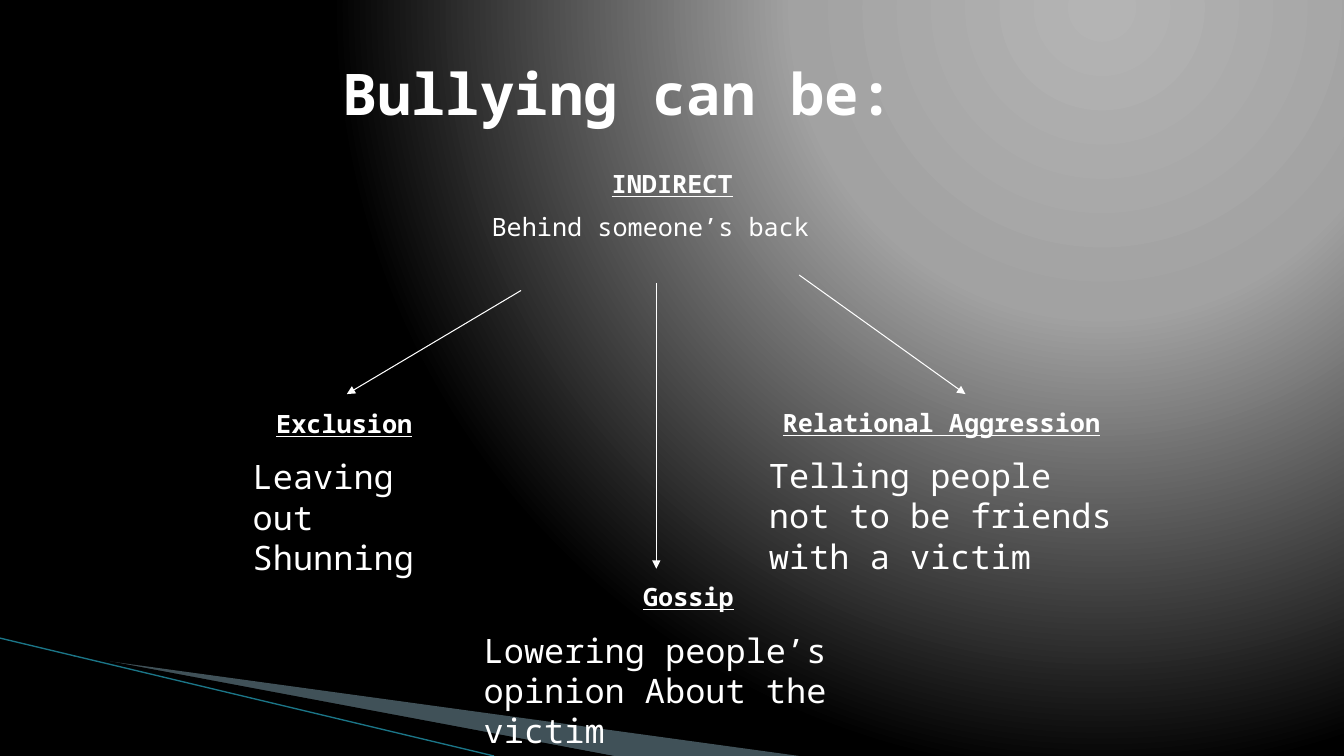
from lxml import etree
from pptx import Presentation
from pptx.dml.color import RGBColor
from pptx.enum.shapes import MSO_CONNECTOR
from pptx.enum.text import MSO_ANCHOR, MSO_AUTO_SIZE, PP_ALIGN
from pptx.oxml.ns import qn
from pptx.util import Cm, Pt

STRAIGHT = MSO_CONNECTOR.STRAIGHT
MIDDLE = MSO_ANCHOR.MIDDLE
NO_AUTOFIT = MSO_AUTO_SIZE.NONE
LEFT, CENTER = PP_ALIGN.LEFT, PP_ALIGN.CENTER

WHITE = RGBColor(0xFF, 0xFF, 0xFF)
BLACK = RGBColor(0x00, 0x00, 0x00)
PALE_BLUE = RGBColor(0xA0, 0xCB, 0xDC)
TEAL = RGBColor(0x1B, 0x75, 0x87)
LIGHT_GREY = RGBColor(0xB4, 0xB4, 0xB4)
MID_GREY = RGBColor(0xA2, 0xA2, 0xA2)
FONT = "Noto Sans Mono"


def add_text(paragraph, text, size, bold=False, underline=False):
    run = paragraph.add_run()
    run.text = text
    run.font.name = FONT
    run.font.size = Pt(size)
    run.font.bold = bold
    run.font.underline = underline
    run.font.color.rgb = WHITE


def add_line(start, end, color, width):
    line = slide.shapes.add_connector(
        STRAIGHT, *[Cm(value) for value in start + end])
    line.line.color.rgb = color
    line.line.width = Pt(width)
    etree.SubElement(line._element.spPr, qn("a:effectLst"))
    return line


prs = Presentation()
prs.slide_width, prs.slide_height = Cm(33.87), Cm(19.05)
slide = prs.slides.add_slide(prs.slide_layouts[5])

slide.background.fill.gradient()
glow = slide._element.find(".//" + qn("a:gradFill"))
for child in list(glow):
    glow.remove(child)
stops = etree.SubElement(glow, qn("a:gsLst"))
for position, color in [(0, LIGHT_GREY), (40, MID_GREY), (100, BLACK)]:
    stop = etree.SubElement(stops, qn("a:gs"), pos=str(position * 1000))
    etree.SubElement(stop, qn("a:srgbClr"), val=str(color))
circle = etree.SubElement(glow, qn("a:path"), path="circle")
etree.SubElement(circle, qn("a:fillToRect"), l="65000", t="0", r="0", b="98000")

title = slide.shapes.title
title.left, title.top, title.width, title.height = Cm(8.38), Cm(0.43), Cm(17.02), Cm(3.81)
title.text_frame.auto_size = NO_AUTOFIT
title.text_frame.vertical_anchor = MIDDLE
heading = title.text_frame.paragraphs[0]
heading.alignment = LEFT
add_text(heading, "Bullying can be:", 41, bold=True)

wedges = [
    ([(1.85, 16.54), (20.14, 19.05), (15.44, 19.05), (1.85, 16.51)], PALE_BLUE, 40),
    ([(1.8, 16.48), (15.47, 19.05), (12.6, 19.05), (1.83, 16.51)], BLACK, 100),
]
for corners, color, opacity in wedges:
    points = [(Cm(x), Cm(y)) for x, y in corners]
    builder = slide.shapes.build_freeform(*points[0], scale=1.0)
    builder.add_line_segments(points[1:], close=True)
    wedge = builder.convert_to_shape()
    wedge.shadow.inherit = False
    wedge.fill.solid()
    wedge.fill.fore_color.rgb = color
    wedge.line.fill.background()
    fill_color = wedge._element.spPr.find(qn("a:solidFill"))[0]
    etree.SubElement(fill_color, qn("a:alpha"), val=str(opacity * 1000))

add_line((0, 16.08), (12.45, 19.05), TEAL, 0.95)

topics = [
    ("Relational Aggression", "Telling people not to be friends with a victim", 24,
     (19.13, 10.13, 9.19, 4.62)),
    ("INDIRECT", "Behind someone’s back", 18, (12.14, 4.11, 9.6, 2.18)),
    ("Exclusion", "Leaving out Shunning", 24, (6.12, 10.16, 5.11, 4.62)),
    ("Gossip", "Lowering people’s opinion About the victim", 24,
     (11.94, 14.53, 10.82, 3.58)),
]
for name, meaning, size, place in topics:
    frame = slide.shapes.add_textbox(*[Cm(value) for value in place]).text_frame
    frame.word_wrap = True
    label = frame.paragraphs[0]
    label.alignment = CENTER
    add_text(label, name, 18, bold=True, underline=True)
    detail = frame.add_paragraph()
    detail.space_before = Pt(size * 0.53)
    add_text(detail, meaning, size)

arrows = [
    ((13.13, 7.32), (8.74, 9.93)),
    ((16.54, 7.14), (16.54, 14.33)),
    ((20.14, 6.93), (24.33, 9.93)),
]
for start, end in arrows:
    arrow = add_line(start, end, WHITE, 0.75)
    etree.SubElement(arrow.line._get_or_add_ln(), qn("a:tailEnd"), type="triangle")

prs.save("out.pptx")
